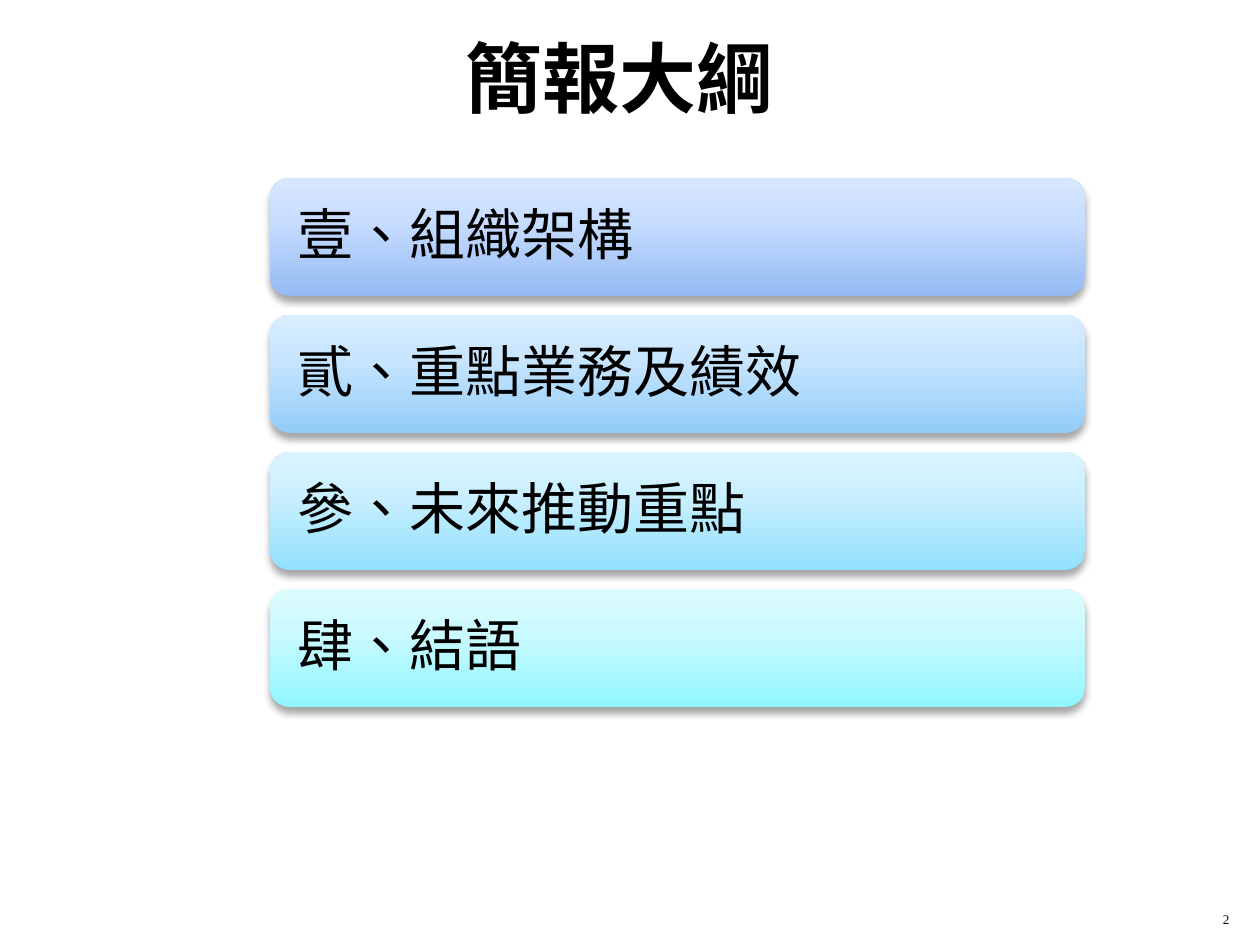
from dataclasses import dataclass

from lxml.etree import SubElement
from pptx import Presentation
from pptx.dml.color import RGBColor
from pptx.enum.lang import MSO_LANGUAGE_ID as Lang
from pptx.enum.shapes import MSO_SHAPE as Shape
from pptx.enum.text import MSO_ANCHOR as Anchor, PP_ALIGN as Align
from pptx.oxml import parse_xml
from pptx.oxml.ns import nsdecls, qn
from pptx.util import Pt

PX = 914400 // 126
FONT = "Times New Roman"
COLORS = {"text": "000000", "shadow": "000000"}


@dataclass(frozen=True)
class Section:
    text: str
    bottom: str
    middle: str
    top: str


SECTIONS = [
    Section("壹、組織架構", "94BBF3", "C8DDFF", "D8E7FF"),
    Section("貳、重點業務及績效", "93CCF7", "C9E6FF", "D9EDFF"),
    Section("參、未來推動重點", "91E0FC", "CBF0FF", "DAF4FF"),
    Section("肆、結語", "91F6FF", "CCFAFF", "DCFCFF"),
]
BAR_LEFT, BAR_TOP, BAR_W, BAR_H, BAR_PITCH = 270, 178, 815, 118, 137


def px(n: int) -> int:
    return n * PX


def place(sp, left: int, top: int, width: int, height: int) -> None:
    sp.left, sp.top, sp.width, sp.height = map(px, (left, top, width, height))


def write(sp, text: str, size: float, align: Align, anchor: Anchor, bold: bool = False):
    tf = sp.text_frame
    tf.word_wrap = True
    tf.vertical_anchor = anchor
    p = tf.paragraphs[0]
    p.text = text
    p.alignment = align
    f = p.runs[0].font
    f.name, f.size, f.bold = FONT, Pt(size), bold
    f.language_id = Lang.TRADITIONAL_CHINESE
    f.color.rgb = RGBColor.from_string(COLORS["text"])
    return p


def fill_gradient(sp, section: Section) -> None:
    sp.fill.gradient()
    sp.fill.gradient_angle = 90
    gs_list = sp._element.spPr.find(qn("a:gradFill")).find(qn("a:gsLst"))
    for gs in list(gs_list):
        gs_list.remove(gs)
    stops = ((0, section.bottom), (65, section.middle), (100, section.top))
    for pos, color in stops:
        gs = SubElement(gs_list, qn("a:gs"), pos=str(pos * 1000))
        SubElement(gs, qn("a:srgbClr"), val=color)


def add_shadow(sp) -> None:
    sp.shadow.inherit = False
    effects = sp._element.spPr.find(qn("a:effectLst"))
    effects.append(parse_xml(
        f'<a:outerShdw {nsdecls("a")} blurRad="{Pt(4)}" dist="{Pt(3)}" '
        f'dir="5400000" rotWithShape="0"><a:srgbClr val="{COLORS["shadow"]}">'
        '<a:alpha val="35000"/></a:srgbClr></a:outerShdw>'))


def add_bar(s, index: int, section: Section) -> None:
    sp = s.shapes.add_shape(Shape.ROUNDED_RECTANGLE, 0, 0, 0, 0)
    place(sp, BAR_LEFT, BAR_TOP + index * BAR_PITCH, BAR_W, BAR_H)
    fill_gradient(sp, section)
    sp.line.fill.background()
    add_shadow(sp)
    tf = sp.text_frame
    tf.margin_left = tf.margin_right = px(22)
    p = write(sp, section.text, 32, Align.LEFT, Anchor.MIDDLE)
    p.line_spacing = 0.9
    p.space_after = Pt(11)


def main() -> None:
    prs = Presentation()
    prs.slide_width, prs.slide_height = px(1260), px(945)
    s = prs.slides.add_slide(prs.slide_layouts[5])

    title = s.shapes.title
    place(title, 53, 18, 1134, 118)
    write(title, "簡報大綱", 44, Align.CENTER, Anchor.MIDDLE, bold=True)

    for i, section in enumerate(SECTIONS):
        add_bar(s, i, section)

    number = s.shapes.add_textbox(0, 0, 0, 0)
    place(number, 1192, 883, 50, 50)
    write(number, "2", 7.5, Align.RIGHT, Anchor.BOTTOM)
    prs.save("out.pptx")


if __name__ == "__main__":
    main()
